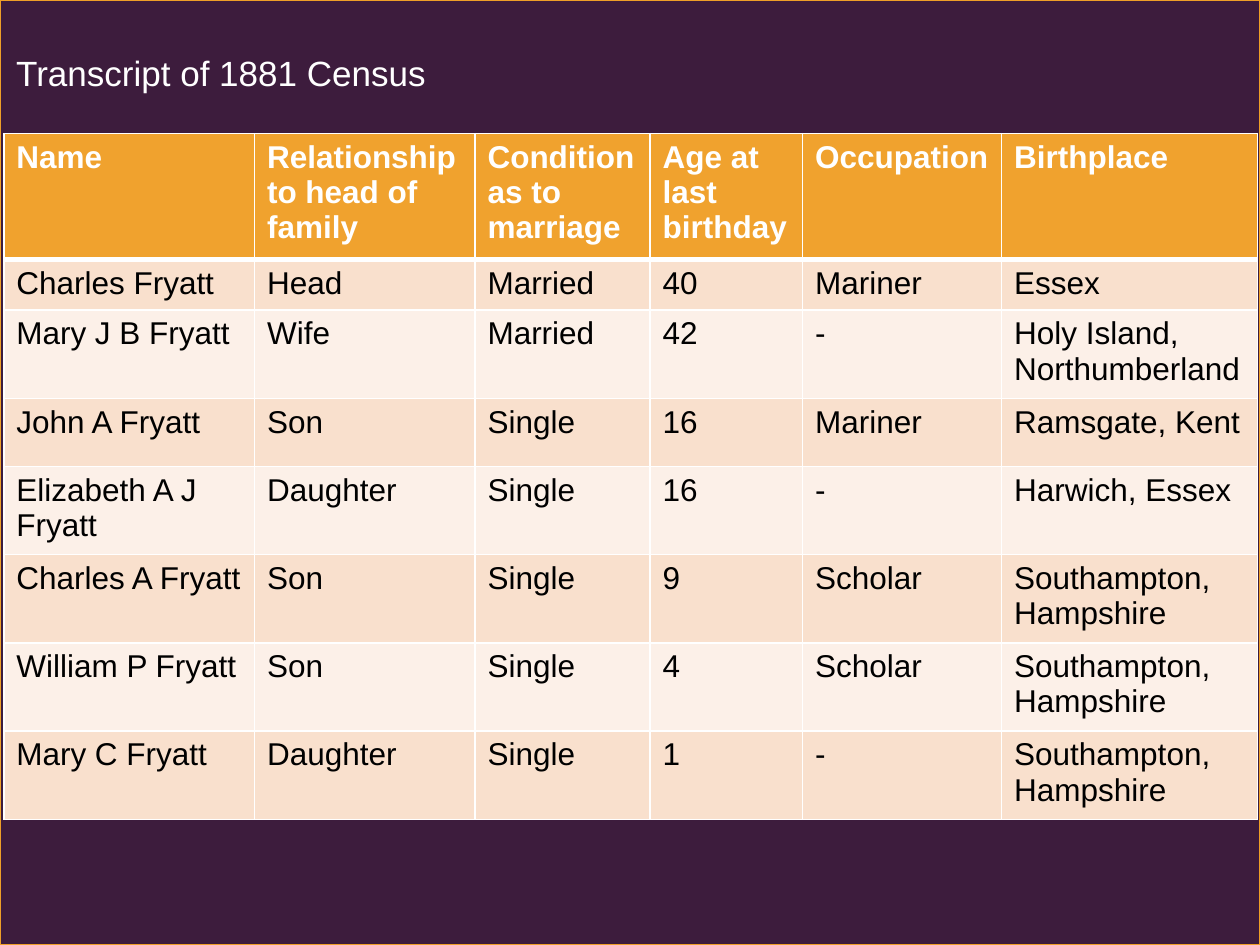
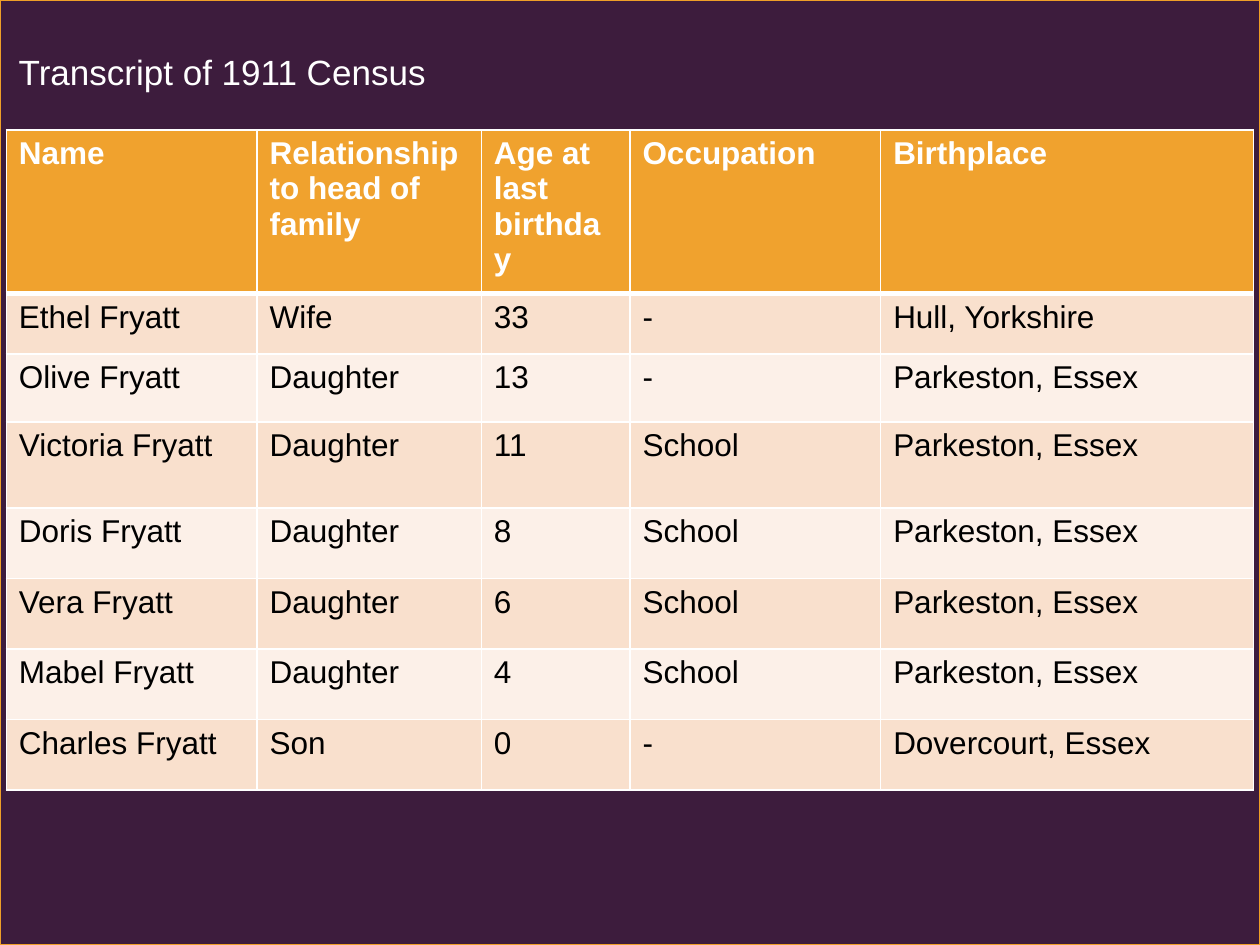
import pptx
import pptx.util
import pptx.dml.color
import pptx.enum.shapes
import pptx.enum.text
import pptx.oxml.ns
import lxml.etree

Inches = pptx.util.Inches
Pt = pptx.util.Pt
FONT = "Arial"
COLOURS = {
    "backdrop": "3D1C3D",
    "frame": "EF9F28",
    "header": "F0A22E",
    "odd_row": "F9E0CD",
    "even_row": "FCF0E8",
    "white": "FFFFFF",
    "black": "000000",
}

censuses = [
    {
        "title": "Transcript of 1881 Census",
        "title_at": (0.03, 0.05, 3.48, 1.36),
        "table_at": (0.03, 1.06),
        "columns": [1.99, 1.75, 1.39, 1.21, 1.58, 2.03],
        "rows": [1.0, 0.4, 0.7, 0.54, 0.7, 0.7, 0.7, 0.7],
        "entries": [
            ("Name", "Relationship to head of family", "Condition as to marriage",
             "Age at last birthday", "Occupation", "Birthplace"),
            ("Charles Fryatt", "Head", "Married", "40", "Mariner", "Essex"),
            ("Mary J B Fryatt", "Wife", "Married", "42", "-", "Holy Island, Northumberland"),
            ("John A Fryatt", "Son", "Single", "16", "Mariner", "Ramsgate, Kent"),
            ("Elizabeth A J Fryatt", "Daughter", "Single", "16", "-", "Harwich, Essex"),
            ("Charles A Fryatt", "Son", "Single", "9", "Scholar", "Southampton, Hampshire"),
            ("William P Fryatt", "Son", "Single", "4", "Scholar", "Southampton, Hampshire"),
            ("Mary C Fryatt", "Daughter", "Single", "1", "-", "Southampton, Hampshire"),
        ],
    },
    {
        "title": "Transcript of 1911 Census",
        "title_at": (0.05, 0.04, 3.46, 1.36),
        "table_at": (0.05, 1.03),
        "columns": [1.99, 1.78, 1.18, 1.99, 2.96],
        "rows": [1.3, 0.48, 0.54, 0.68, 0.56, 0.56, 0.56, 0.56],
        "entries": [
            ("Name", "Relationship to head of family", "Age at last birthday",
             "Occupation", "Birthplace"),
            ("Ethel Fryatt", "Wife", "33", "-", "Hull, Yorkshire"),
            ("Olive Fryatt", "Daughter", "13", "-", "Parkeston, Essex"),
            ("Victoria Fryatt", "Daughter", "11", "School", "Parkeston, Essex"),
            ("Doris Fryatt", "Daughter", "8", "School", "Parkeston, Essex"),
            ("Vera Fryatt", "Daughter", "6", "School", "Parkeston, Essex"),
            ("Mabel Fryatt", "Daughter", "4", "School", "Parkeston, Essex"),
            ("Charles Fryatt", "Son", "0", "-", "Dovercourt, Essex"),
        ],
    },
]


def colour(name):
    return pptx.dml.color.RGBColor.from_string(COLOURS[name])


def write(text_frame, text, size, colour_name, bold=False):
    text_frame.text = text
    font = text_frame.paragraphs[0].runs[0].font
    font.name = FONT
    font.size = Pt(size)
    font.bold = bold
    font.color.rgb = colour(colour_name)


deck = pptx.Presentation()
deck.slide_width = Inches(10)
deck.slide_height = Inches(7.5)

for census in censuses:
    slide = deck.slides.add_slide(deck.slide_layouts[6])

    backdrop = slide.shapes.add_shape(
        pptx.enum.shapes.MSO_SHAPE.RECTANGLE, 0, 0, deck.slide_width, deck.slide_height)
    backdrop.shadow.inherit = False
    backdrop.fill.solid()
    backdrop.fill.fore_color.rgb = colour("backdrop")
    backdrop.line.color.rgb = colour("frame")
    backdrop.line.width = Pt(0.75)

    heading = slide.shapes.add_textbox(*map(Inches, census["title_at"])).text_frame
    heading.word_wrap = False
    heading.vertical_anchor = pptx.enum.text.MSO_ANCHOR.TOP
    heading.margin_top = Inches(0.36)
    write(heading, census["title"], 20, "white")

    left, top = census["table_at"]
    columns, rows = census["columns"], census["rows"]
    transcript = slide.shapes.add_table(
        len(rows), len(columns), Inches(left), Inches(top),
        Inches(sum(columns)), Inches(sum(rows))).table
    for column, width in zip(transcript.columns, columns):
        column.width = Inches(width)
    for row, height in zip(transcript.rows, rows):
        row.height = Inches(height)

    for row_number, entry in enumerate(census["entries"]):
        is_header = row_number == 0
        band = "header" if is_header else "odd_row" if row_number % 2 else "even_row"
        edges = {"lnL": 1, "lnR": 1,
                 "lnT": 3 if row_number == 1 else 1,
                 "lnB": 3 if is_header else 1}
        for column_number, value in enumerate(entry):
            cell = transcript.cell(row_number, column_number)
            write(cell.text_frame, value, 18, "white" if is_header else "black", is_header)
            properties = cell._tc.get_or_add_tcPr()
            for edge, points in edges.items():
                border = lxml.etree.SubElement(
                    properties, pptx.oxml.ns.qn("a:" + edge), w=str(Pt(points)))
                paint = lxml.etree.SubElement(border, pptx.oxml.ns.qn("a:solidFill"))
                lxml.etree.SubElement(
                    paint, pptx.oxml.ns.qn("a:srgbClr"), val=COLOURS["white"])
            cell.fill.solid()
            cell.fill.fore_color.rgb = colour(band)

deck.save("out.pptx")
